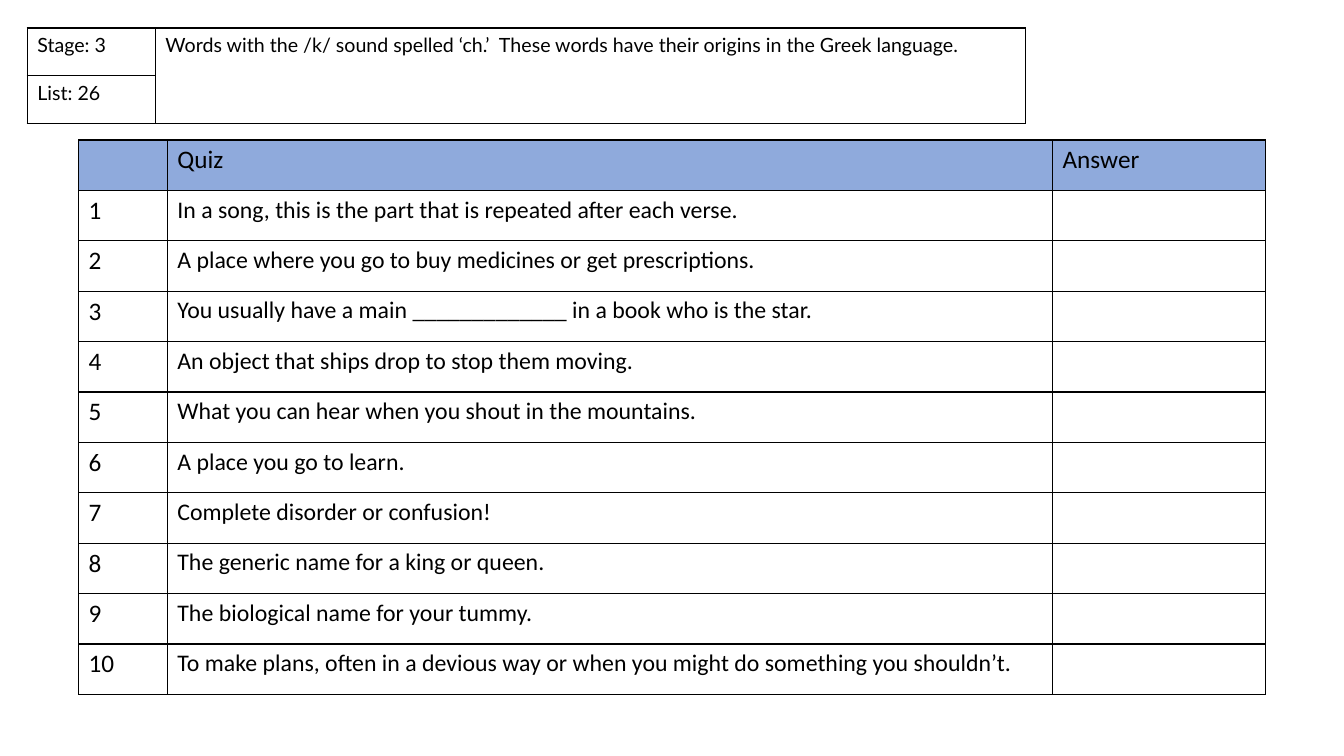
"""Build a spelling quiz slide with a list heading and an answer grid."""
import pptx
import pptx.dml.color
import pptx.oxml
import pptx.oxml.ns
import pptx.util

COLORS = {"text": "000000", "border": "000000", "header": "8FAADC"}
BORDER_SIDES = ("a:lnL", "a:lnR", "a:lnT", "a:lnB")

QUESTIONS = [
    "In a song, this is the part that is repeated after each verse.",
    "A place where you go to buy medicines or get prescriptions.",
    "You usually have a main _____________ in a book who is the star.",
    "An object that ships drop to stop them moving.",
    "What you can hear when you shout in the mountains.",
    "A place you go to learn.",
    "Complete disorder or confusion!",
    "The generic name for a king or queen.",
    "The biological name for your tummy.",
    "To make plans, often in a devious way or when you might do something you shouldn’t.",
]


class QuizSlide:
    """Hold the style, the grid and the current slide."""

    GRID_COLUMNS = 100
    GRID_ROWS = 75
    BORDER_WIDTH = pptx.util.Pt(1)

    def __init__(self, presentation):
        self.column = presentation.slide_width / self.GRID_COLUMNS
        self.row = presentation.slide_height / self.GRID_ROWS
        self.slide = presentation.slides.add_slide(presentation.slide_layouts[6])

    def add_table(self, left, top, column_widths, row_height, row_count):
        """Add a plain bordered table measured in grid columns and rows."""
        frame = self.slide.shapes.add_table(
            row_count,
            len(column_widths),
            round(left * self.column),
            round(top * self.row),
            round(sum(column_widths) * self.column),
            round(row_count * row_height * self.row),
        )
        table = frame.table
        table.first_row = False
        table.horz_banding = False
        for column, width in zip(table.columns, column_widths):
            column.width = round(width * self.column)
        for row in table.rows:
            row.height = round(row_height * self.row)
        for cell in table.iter_cells():
            self.add_borders(cell)
            cell.fill.background()
        return table

    def add_borders(self, cell):
        """Draw a solid line on all four sides of a cell."""
        properties = cell._tc.get_or_add_tcPr()
        for side in BORDER_SIDES:
            properties.append(pptx.oxml.parse_xml(
                f'<{side} {pptx.oxml.ns.nsdecls("a")} w="{self.BORDER_WIDTH}">'
                f'<a:solidFill><a:srgbClr val="{COLORS["border"]}"/></a:solidFill>'
                f'</{side}>'
            ))

    def fill_cell(self, cell, color):
        """Fill a cell with a named colour."""
        cell.fill.solid()
        cell.fill.fore_color.rgb = pptx.dml.color.RGBColor.from_string(COLORS[color])

    def set_cell_text(self, cell, text, size, font_name):
        """Put styled text into a cell."""
        cell.text_frame.text = text
        for run in cell.text_frame.paragraphs[0].runs:
            run.font.size = pptx.util.Pt(size)
            run.font.name = font_name
            run.font.color.rgb = pptx.dml.color.RGBColor.from_string(COLORS["text"])

    def add_quiz(self):
        """Add the numbered questions with a column for answers."""
        table = self.add_table(5.85, 13.88, (6.6, 65.87, 15.83), 5, len(QUESTIONS) + 1)
        for cell in table.rows[0].cells:
            self.fill_cell(cell, "header")
        self.set_cell_text(table.cell(0, 1), "Quiz", 18, "Calibri")
        self.set_cell_text(table.cell(0, 2), "Answer", 18, "Calibri")
        for number, question in enumerate(QUESTIONS, start=1):
            self.set_cell_text(table.cell(number, 0), str(number), 18, "Calibri")
            self.set_cell_text(table.cell(number, 1), question, 17, "Calibri")

    def add_heading(self):
        """Add the stage, the list number and the spelling rule."""
        table = self.add_table(2.03, 2.78, (9.53, 64.74), 4.75, 2)
        table.cell(0, 1).merge(table.cell(1, 1))
        self.set_cell_text(table.cell(0, 0), "Stage: 3", 14, "Lato")
        self.set_cell_text(table.cell(1, 0), "List: 26", 14, "Lato")
        rule = "Words with the /k/ sound spelled ‘ch.’  These words have their origins in the Greek language."
        self.set_cell_text(table.cell(0, 1), rule, 14, "Lato")


def main():
    presentation = pptx.Presentation()
    presentation.slide_width = pptx.util.Inches(13.33)
    presentation.slide_height = pptx.util.Inches(7.5)
    quiz_slide = QuizSlide(presentation)
    quiz_slide.add_quiz()
    quiz_slide.add_heading()
    presentation.save("out.pptx")


if __name__ == "__main__":
    main()
